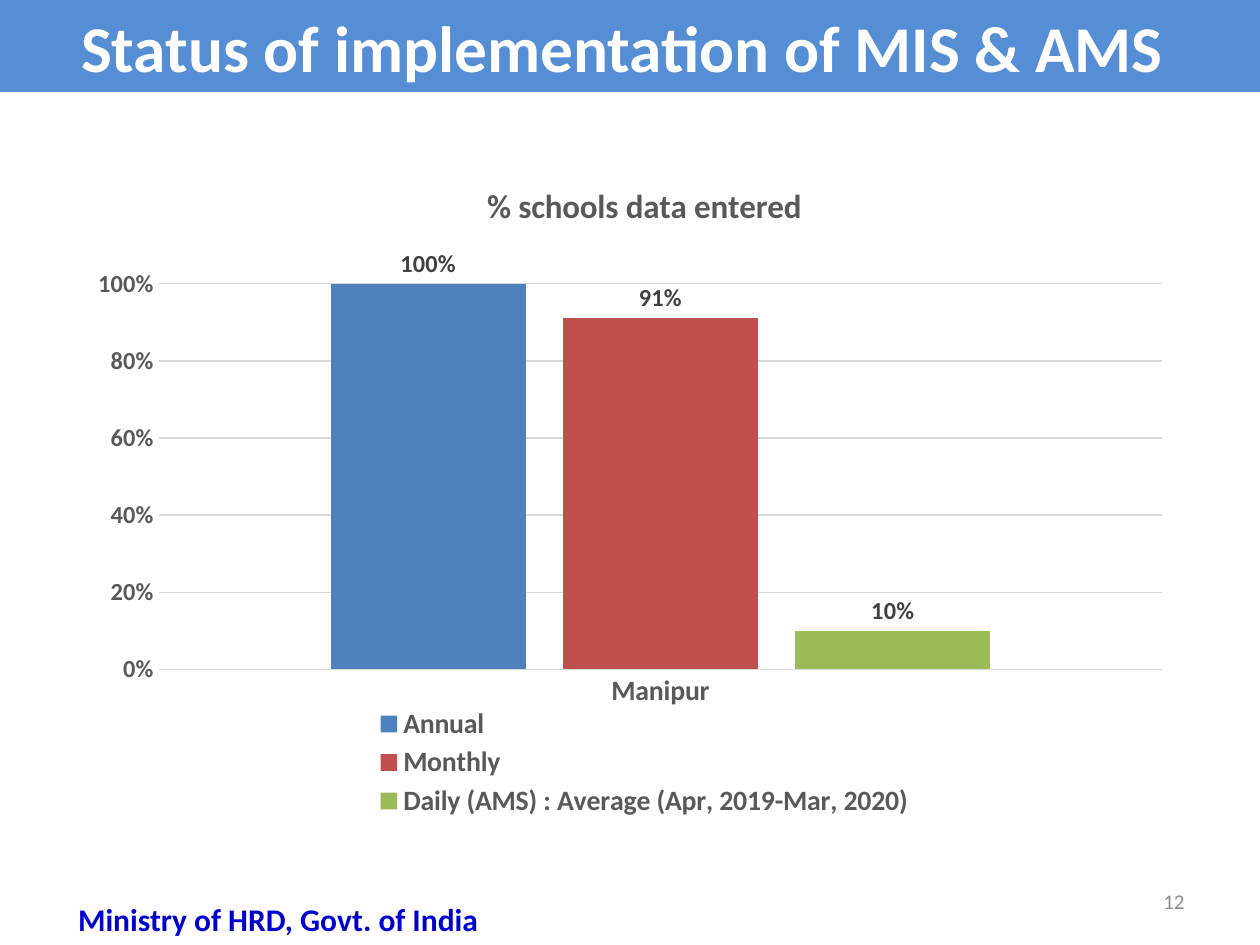
import pptx
import pptx.chart.data
import pptx.dml.color
import pptx.enum.chart
import pptx.enum.shapes
import pptx.enum.text
import pptx.oxml
import pptx.oxml.ns
import pptx.util

Pt = pptx.util.Pt
RGB = pptx.dml.color.RGBColor
Align = pptx.enum.text.PP_ALIGN
Anchor = pptx.enum.text.MSO_ANCHOR
kinds = pptx.enum.chart

WHITE = RGB(0xFF, 0xFF, 0xFF)
SKY = RGB(0x55, 0x8E, 0xD5)
NAVY = RGB(0x00, 0x00, 0xCC)
PALE = RGB(0x8C, 0x8C, 0x8C)
GRAY = RGB(0x59, 0x59, 0x59)
DARK = RGB(0x40, 0x40, 0x40)
RULE = RGB(0xD9, 0xD9, 0xD9)
BLUE = RGB(0x4F, 0x81, 0xBD)
RED = RGB(0xC0, 0x50, 0x4D)
GREEN = RGB(0x9B, 0xBB, 0x59)

ROWS = [
    ("Annual", 1, BLUE),
    ("Monthly", 0.91, RED),
    ("Daily (AMS) : Average (Apr, 2019-Mar, 2020)", 0.1, GREEN),
]


def apply(item, **vals):
    for name, val in vals.items():
        setattr(item, name, val)


def style(font, size, color, bold=True):
    apply(font, name="Calibri", size=Pt(size), bold=bold)
    font.color.rgb = color


def write(shape, text, align, anchor, size, color, bold=True):
    frame = shape.text_frame
    apply(frame, word_wrap=True, vertical_anchor=anchor)
    par = frame.paragraphs[0]
    par.alignment = align
    run = par.add_run()
    run.text = text
    style(run.font, size, color, bold)


def add_bar(slide, box, text):
    bar = slide.shapes.add_shape(
        pptx.enum.shapes.MSO_SHAPE.RECTANGLE, *map(Pt, box))
    bar.shadow.inherit = False
    bar.fill.solid()
    bar.fill.fore_color.rgb = SKY
    bar.line.fill.background()
    write(bar, text, Align.CENTER, Anchor.MIDDLE, 37.3, WHITE)


def add_note(slide, box, *args):
    write(slide.shapes.add_textbox(*map(Pt, box)), *args)


def place(part, x, y, w, h, inner=False):
    """Give a chart part a fixed place, in fractions of the chart."""
    old = part.find(pptx.oxml.ns.qn("c:layout"))
    if old is not None:
        part.remove(old)
    target = '<c:layoutTarget val="inner"/>' if inner else ""
    tags = {"xMode": "edge", "yMode": "edge", "x": x, "y": y, "w": w, "h": h}
    body = "".join(f'<c:{tag} val="{val}"/>' for tag, val in tags.items())
    layout = pptx.oxml.parse_xml(
        f'<c:layout {pptx.oxml.ns.nsdecls("c")}>'
        f"<c:manualLayout>{target}{body}</c:manualLayout></c:layout>")
    # The layout follows the legend position, and leads the plot area
    part.insert(0 if inner else 1, layout)


def set_axes(chart):
    none = kinds.XL_TICK_MARK.NONE
    cat, val = chart.category_axis, chart.value_axis
    for axis, size in ((cat, 16), (val, 14)):
        apply(axis, major_tick_mark=none, minor_tick_mark=none)
        style(axis.tick_labels.font, size, GRAY)
    apply(val, minimum_scale=0, maximum_scale=1, major_unit=0.2,
          has_major_gridlines=True)
    apply(val.tick_labels, number_format="0%", number_format_is_linked=False)
    val.format.line.fill.background()
    for line in (cat.format.line, val.major_gridlines.format.line):
        line.color.rgb = RULE
        line.width = Pt(0.75)


def set_bars(plot):
    apply(plot, gap_width=176, overlap=-19, vary_by_categories=False)
    for bars, (_, _, color) in zip(plot.series, ROWS):
        bars.format.fill.solid()
        bars.format.fill.fore_color.rgb = color
        labels = bars.data_labels
        apply(labels, show_value=True, number_format="0%",
              number_format_is_linked=False,
              position=kinds.XL_LABEL_POSITION.OUTSIDE_END)
        style(labels.font, 14, DARK)


def add_graph(slide, box):
    data = pptx.chart.data.CategoryChartData(number_format="0%")
    data.categories = ["Manipur"]
    for name, val, _ in ROWS:
        data.add_series(name, [val])
    chart = slide.shapes.add_chart(
        kinds.XL_CHART_TYPE.COLUMN_CLUSTERED, *map(Pt, box), data).chart
    style(chart.font, 10, RGB(0, 0, 0), False)

    # Title
    chart.has_title = True
    frame = chart.chart_title.text_frame
    frame.text = "% schools data entered"
    style(frame.paragraphs[0].runs[0].font, 19, GRAY)
    chart.chart_title.include_in_layout = False

    # Legend
    chart.has_legend = True
    legend = chart.legend
    apply(legend, position=kinds.XL_LEGEND_POSITION.BOTTOM,
          include_in_layout=False)
    style(legend.font, 16, GRAY)
    place(chart.element.find(".//" + pptx.oxml.ns.qn("c:legend")),
          0.25, 0.82, 0.5, 0.18)

    # Plot
    set_axes(chart)
    set_bars(chart.plots[0])
    place(chart.element.find(".//" + pptx.oxml.ns.qn("c:plotArea")),
          0.05, 0.19, 0.93, 0.58, inner=True)


def main():
    deck = pptx.Presentation()
    apply(deck, slide_width=Pt(720), slide_height=Pt(540))
    slide = deck.slides.add_slide(deck.slide_layouts[6])

    # Chart and heading
    add_graph(slide, (56, 90, 620.5, 380))
    add_bar(slide, (0, 0, 720, 52.5), "Status of implementation of MIS & AMS ")

    # Page number and footer
    add_note(slide, (516, 500.5, 168, 28.75), "12",
             Align.RIGHT, Anchor.MIDDLE, 12, PALE, False)
    add_note(slide, (18, 511, 282, 29), "Ministry of HRD, Govt. of India",
             Align.CENTER, Anchor.TOP, 18, NAVY)

    deck.save("out.pptx")


if __name__ == "__main__":
    main()
